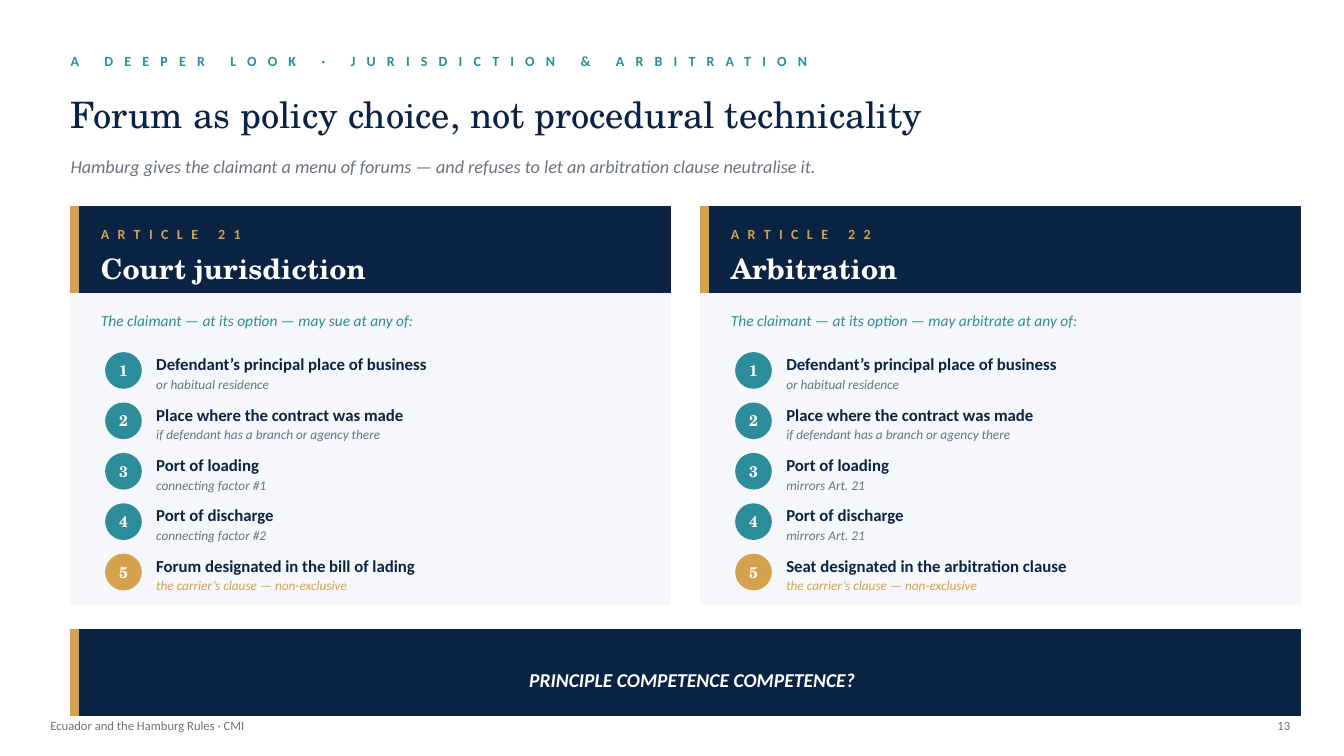
from dataclasses import dataclass

from pptx import Presentation
from pptx.dml.color import RGBColor
from pptx.enum.shapes import MSO_SHAPE
from pptx.enum.text import MSO_ANCHOR, PP_ALIGN
from pptx.util import Inches, Pt

RECTANGLE, OVAL = MSO_SHAPE.RECTANGLE, MSO_SHAPE.OVAL
TOP, MIDDLE = MSO_ANCHOR.TOP, MSO_ANCHOR.MIDDLE
LEFT, CENTER, RIGHT = PP_ALIGN.LEFT, PP_ALIGN.CENTER, PP_ALIGN.RIGHT

# All positions and sizes count square grid cells of a tenth of an inch.
CELL = Inches(0.1)
SLIDE_COLS, SLIDE_ROWS = 133.33, 75
MARGIN, CARD_COLS, GUTTER = 7, 59.5, 3
CONTENT_COLS = 2 * CARD_COLS + GUTTER
CARD_TOP, CARD_ROWS = 20.5, 39.5
BAND_ROWS = 8.5
FORUM_TOP, FORUM_PITCH, BADGE = 35, 5, 3.5


@dataclass(frozen=True)
class TextStyle:
    size: float
    color: str
    font: str = "Calibri"
    bold: bool = False
    italic: bool = False
    tracking: float = 0


class Theme:
    NAVY, TEAL, GOLD = "0A2342", "2C8C99", "D4A24C"
    GREY, PALE, WHITE = "6B7280", "F5F7FA", "FFFFFF"
    SERIF = "TeX Gyre Schola"

    eyebrow = TextStyle(10, TEAL, bold=True, tracking=8)
    title = TextStyle(26, NAVY, SERIF)
    subtitle = TextStyle(13, GREY, italic=True)
    article = TextStyle(10, GOLD, bold=True, tracking=6)
    heading = TextStyle(20, WHITE, SERIF, bold=True)
    lead_in = TextStyle(11, TEAL, italic=True)
    badge = TextStyle(11, WHITE, SERIF, bold=True)
    forum = TextStyle(12, NAVY, bold=True)
    remark = TextStyle(9.5, GREY, italic=True)
    clause_remark = TextStyle(9.5, GOLD, italic=True)
    principle = TextStyle(14, WHITE, bold=True, italic=True)
    footer = TextStyle(9, GREY)


SHARED_FORUMS = [
    ("Defendant’s principal place of business", "or habitual residence"),
    ("Place where the contract was made", "if defendant has a branch or agency there"),
]
CLAUSE_REMARK = "the carrier’s clause — non-exclusive"
CARDS = [
    ("ARTICLE 21", "Court jurisdiction",
     "The claimant — at its option — may sue at any of:",
     SHARED_FORUMS + [
         ("Port of loading", "connecting factor #1"),
         ("Port of discharge", "connecting factor #2"),
         ("Forum designated in the bill of lading", CLAUSE_REMARK),
     ]),
    ("ARTICLE 22", "Arbitration",
     "The claimant — at its option — may arbitrate at any of:",
     SHARED_FORUMS + [
         ("Port of loading", "mirrors Art. 21"),
         ("Port of discharge", "mirrors Art. 21"),
         ("Seat designated in the arbitration clause", CLAUSE_REMARK),
     ]),
]


def cells(*counts):
    return [round(count * CELL) for count in counts]


def write(frame, text, style, align=LEFT, anchor=MIDDLE):
    """Fill a text frame, without insets, with one styled line."""
    frame.word_wrap = True
    frame.vertical_anchor = anchor
    frame.margin_left = frame.margin_top = frame.margin_right = frame.margin_bottom = 0
    frame.text = text
    line = frame.paragraphs[0]
    line.alignment = align
    run = line.runs[0]
    run.font.name = style.font
    run.font.size = Pt(style.size)
    run.font.bold = style.bold
    run.font.italic = style.italic
    run.font.color.rgb = RGBColor.from_string(style.color)
    if style.tracking:
        run.font._element.set("spc", str(round(style.tracking * 100)))


def add_label(slide, box, text, style, align=LEFT, anchor=MIDDLE):
    label = slide.shapes.add_textbox(*cells(*box))
    write(label.text_frame, text, style, align, anchor)


def add_block(slide, box, color, outline=RECTANGLE):
    block = slide.shapes.add_shape(outline, *cells(*box))
    block.shadow.inherit = False
    block.fill.solid()
    block.fill.fore_color.rgb = RGBColor.from_string(color)
    block.line.color.rgb = RGBColor.from_string(color)
    block.line.width = Pt(1)
    return block


def add_band(slide, left, top, cols):
    """Draw a navy band with a gold edge on its left."""
    add_block(slide, (left, top, cols, BAND_ROWS), Theme.NAVY)
    add_block(slide, (left, top, 0.8, BAND_ROWS), Theme.GOLD)


def add_forum(slide, left, top, number, forum, remark, from_clause):
    badge_color = Theme.GOLD if from_clause else Theme.TEAL
    remark_style = Theme.clause_remark if from_clause else Theme.remark
    badge = add_block(slide, (left, top, BADGE, BADGE), badge_color, OVAL)
    write(badge.text_frame, str(number), Theme.badge, CENTER)
    add_label(slide, (left + 5, top - 0.5, 49.5, 3.2), forum, Theme.forum)
    add_label(slide, (left + 5, top + 2.3, 49.5, 2.5), remark, remark_style, anchor=TOP)


def add_card(slide, left, article, heading, lead_in, forums):
    inner = left + 3
    inner_cols = CARD_COLS - 6
    add_block(slide, (left, CARD_TOP, CARD_COLS, CARD_ROWS), Theme.PALE)
    add_band(slide, left, CARD_TOP, CARD_COLS)
    add_label(slide, (inner, CARD_TOP + 1.2, 20, 3), article, Theme.article)
    add_label(slide, (inner, CARD_TOP + 3.6, inner_cols, 5), heading, Theme.heading)
    add_label(slide, (inner, CARD_TOP + 9.5, inner_cols, 3.5), lead_in, Theme.lead_in)
    for index, (forum, remark) in enumerate(forums):
        add_forum(slide, left + 3.5, FORUM_TOP + index * FORUM_PITCH, index + 1,
                  forum, remark, remark == CLAUSE_REMARK)


def add_header(slide):
    add_label(slide, (MARGIN, 4.5, 80, 3),
              "A DEEPER LOOK · JURISDICTION & ARBITRATION", Theme.eyebrow)
    add_label(slide, (MARGIN, 7.8, 120, 7),
              "Forum as policy choice, not procedural technicality", Theme.title)
    add_label(slide, (MARGIN, 14.5, 120, 4),
              "Hamburg gives the claimant a menu of forums — and refuses to let "
              "an arbitration clause neutralise it.", Theme.subtitle)


def add_footer(slide):
    add_label(slide, (5, 70.5, 80, 3), "Ecuador and the Hamburg Rules · CMI", Theme.footer)
    add_label(slide, (123, 70.5, 5, 3), "13", Theme.footer, RIGHT)


def main():
    deck = Presentation()
    deck.slide_width, deck.slide_height = cells(SLIDE_COLS, SLIDE_ROWS)
    slide = deck.slides.add_slide(deck.slide_layouts[6])
    add_header(slide)
    for index, card in enumerate(CARDS):
        add_card(slide, MARGIN + index * (CARD_COLS + GUTTER), *card)
    add_band(slide, MARGIN, 62.5, CONTENT_COLS)
    add_label(slide, (52.5, 63.7, 34, 7.5),
              "PRINCIPLE COMPETENCE COMPETENCE?", Theme.principle)
    add_footer(slide)
    deck.save("out.pptx")


if __name__ == "__main__":
    main()
